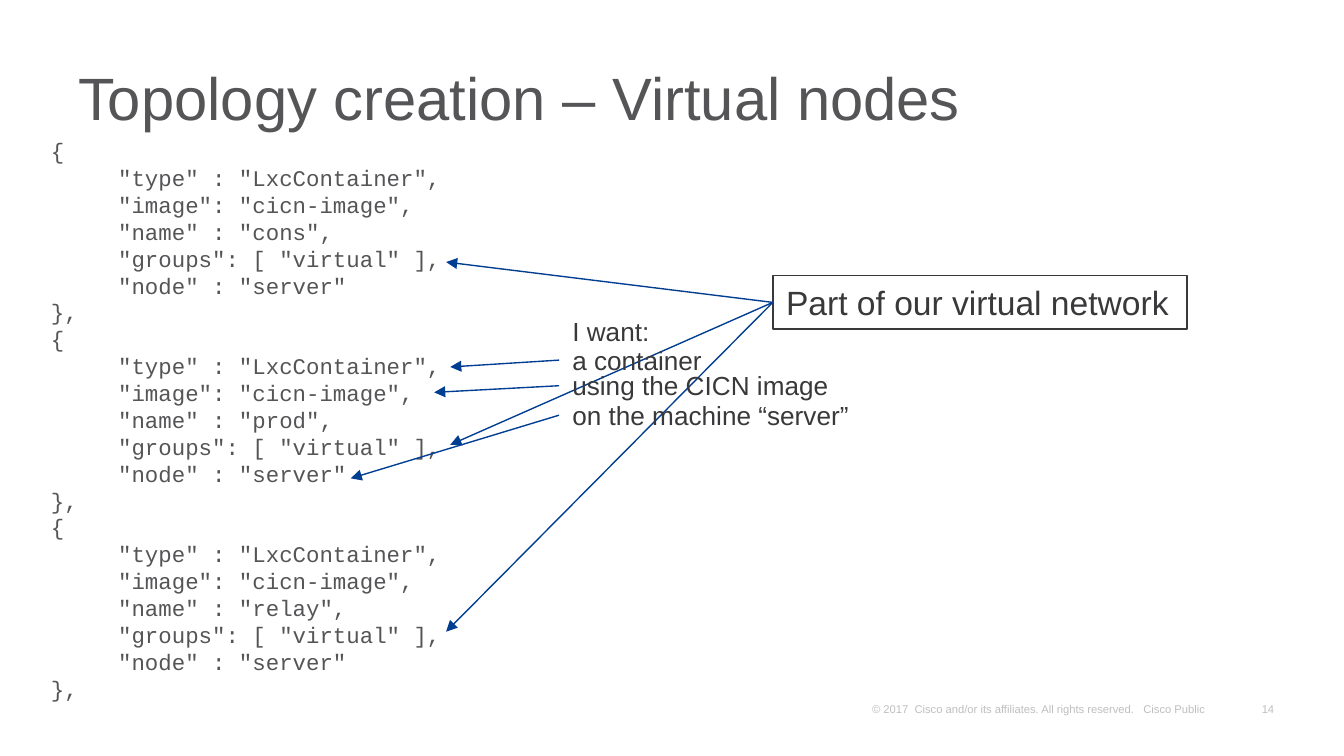
import pptx
import pptx.util
import pptx.dml.color
import pptx.enum.shapes
import pptx.enum.text
import pptx.oxml.ns
from lxml import etree

Pt = pptx.util.Pt
ALIGN = pptx.enum.text.PP_ALIGN
ANCHOR = pptx.enum.text.MSO_ANCHOR
qn = pptx.oxml.ns.qn

COLORS = {"grey": "555558", "dark": "39393B", "blue": "003E91",
          "footer": "BFBFBF", "white": "FFFFFF"}

TITLE = "Topology creation – Virtual nodes"
NODES = ["cons", "prod", "relay"]
NODE_LINES = [
    "{",
    '\t"type" : "LxcContainer",',
    '\t"image": "cicn-image",',
    '\t"name" : "NODE",',
    '\t"groups": [ "virtual" ],',
    '\t"node" : "server"',
    "},",
]
NETWORK_LABEL = "Part of our virtual network"
NETWORK_BOX = (414, 147.6, 221.8, 28.8)
GROUP_ENDS = [(239, 140.4), (241.2, 238.3), (239, 338.4)]
# label, top, width, arrow end
WISHES = [
    ("I want:", 165.6, 56.2, None),
    ("a container", 180.7, 84.2, (241.2, 196.6)),
    ("using the CICN image", 194.4, 152.6, (232.6, 210.2)),
    ("on the machine “server”", 210.2, 163.4, (187.9, 256.3)),
]
WISH_LEFT, WISH_HEIGHT = 299.5, 24.5
FOOTERS = [
    ("© 2017  Cisco and/or its affiliates. All rights reserved.   Cisco Public",
     (462.2, 373.7, 209.5, 12.2), ALIGN.LEFT),
    ("14", (670.3, 373.7, 17.3, 12.2), ALIGN.RIGHT),
]


def color(name):
    return pptx.dml.color.RGBColor.from_string(COLORS[name])


def style(para, size, color_name, font="Arial"):
    for run in para.runs:
        run.font.size = Pt(size)
        run.font.name = font
        run.font.color.rgb = color(color_name)


def add_text(slide, text, place, size, color_name, font="Arial"):
    box = slide.shapes.add_textbox(*map(Pt, place))
    box.text_frame.text = text
    for para in box.text_frame.paragraphs:
        style(para, size, color_name, font)
    return box


def add_code(slide):
    code = "\n".join(line.replace("NODE", node) for node in NODES for line in NODE_LINES)
    box = add_text(slide, code, (20.2, 70, 247, 349.2), 12, "grey", "Courier New")
    box.text_frame.word_wrap = True
    for para in box.text_frame.paragraphs:
        para.line_spacing = Pt(14.4)
        tabs = etree.SubElement(para._p.get_or_add_pPr(), qn("a:tabLst"))
        etree.SubElement(tabs, qn("a:tab"), pos=str(int(Pt(36))), algn="l")


def add_arrow(slide, start, end):
    arrow = slide.shapes.add_connector(
        pptx.enum.shapes.MSO_CONNECTOR.STRAIGHT, *map(Pt, start + end))
    arrow.line.color.rgb = color("blue")
    arrow.line.width = Pt(0.75)
    etree.SubElement(arrow.line._get_or_add_ln(), qn("a:tailEnd"), type="triangle")
    etree.SubElement(arrow._element.spPr, qn("a:effectLst"))


def add_title(slide):
    title = slide.shapes.title
    title.left, title.top, title.width, title.height = map(Pt, (34.6, 26.6, 657.4, 57.6))
    frame = title.text_frame
    frame.text = TITLE
    frame.vertical_anchor = ANCHOR.MIDDLE
    para = frame.paragraphs[0]
    para.alignment = ALIGN.LEFT
    para.line_spacing = 0.8
    style(para, 32, "grey")


def add_network_box(slide):
    box = slide.shapes.add_shape(
        pptx.enum.shapes.MSO_SHAPE.RECTANGLE, *map(Pt, NETWORK_BOX))
    box.shadow.inherit = False
    box.fill.background()
    box.line.color.rgb = color("dark")
    box.line.width = Pt(1)
    box.text_frame.text = NETWORK_LABEL
    box.text_frame.word_wrap = False
    para = box.text_frame.paragraphs[0]
    para.alignment = ALIGN.LEFT
    style(para, 18, "dark")


def add_footer(slide, text, place, alignment):
    frame = add_text(slide, text, place, 6, "footer").text_frame
    frame.word_wrap = True
    frame.vertical_anchor = ANCHOR.BOTTOM
    frame.margin_left = frame.margin_right = Pt(5)
    frame.margin_top = frame.margin_bottom = Pt(2.2)
    frame.paragraphs[0].alignment = alignment


def main():
    deck = pptx.Presentation()
    deck.slide_width, deck.slide_height = Pt(720), Pt(405)
    slide = deck.slides.add_slide(deck.slide_layouts.get_by_name("Title Only"))
    slide.background.fill.solid()
    slide.background.fill.fore_color.rgb = color("white")

    for footer in FOOTERS:
        add_footer(slide, *footer)
    add_title(slide)
    add_code(slide)
    add_network_box(slide)
    left, top, _, height = NETWORK_BOX
    for end in GROUP_ENDS:
        add_arrow(slide, (left, top + height / 2), end)
    for label, top, width, end in WISHES:
        if end:
            add_arrow(slide, (WISH_LEFT, top + WISH_HEIGHT / 2), end)
        add_text(slide, label, (WISH_LEFT, top, width, WISH_HEIGHT), 14, "dark")
    deck.save("out.pptx")


if __name__ == "__main__":
    main()
